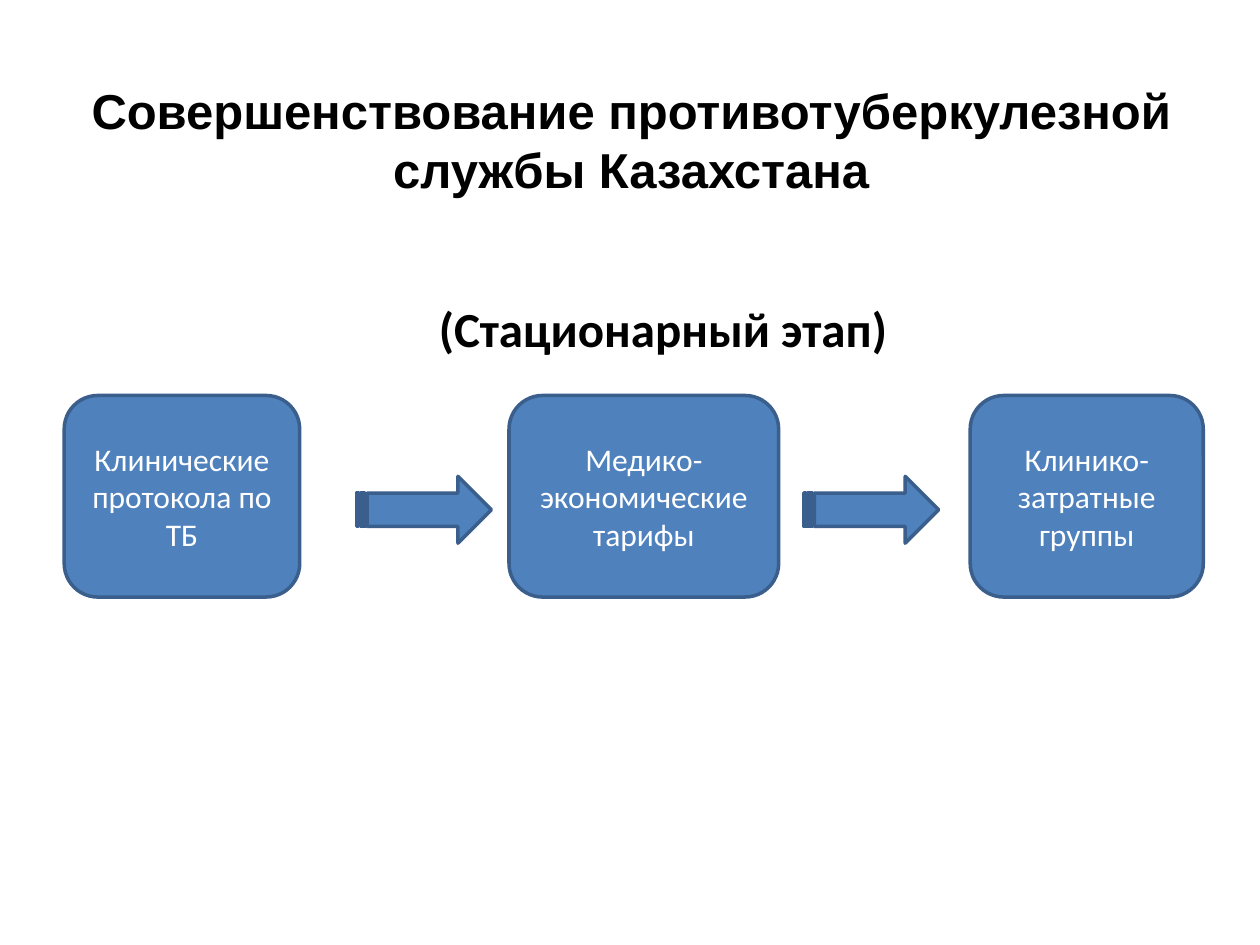
from dataclasses import dataclass

from pptx import Presentation
from pptx.dml.color import RGBColor
from pptx.enum.shapes import MSO_SHAPE
from pptx.enum.text import MSO_ANCHOR, MSO_AUTO_SIZE, PP_ALIGN
from pptx.util import Pt


@dataclass(frozen=True)
class Theme:
    background: str = "FFFFFF"
    heading: str = "000000"
    label: str = "FFFFFF"
    fill: str = "4F81BD"
    outline: str = "3A5F8C"
    title_font: str = "Arial"
    body_font: str = "Calibri"
    heading_size: float = 28
    label_size: float = 18
    outline_width: float = 2


class SlideBuilder:
    def __init__(self, slide, theme):
        self.slide = slide
        self.theme = theme
        background = slide.background.fill
        background.solid()
        background.fore_color.rgb = RGBColor.from_string(theme.background)

    def add_text(self, shape, text, font, size, color, bold=False):
        frame = shape.text_frame
        frame.word_wrap = True
        frame.auto_size = MSO_AUTO_SIZE.NONE
        paragraph = frame.paragraphs[0]
        paragraph.alignment = PP_ALIGN.CENTER
        run = paragraph.add_run()
        run.text = text
        run.font.name = font
        run.font.size = Pt(size)
        run.font.bold = bold
        run.font.color.rgb = RGBColor.from_string(color)
        return frame

    def title(self, text, left, top, width, height):
        shape = self.slide.shapes.title
        shape.left, shape.top = Pt(left), Pt(top)
        shape.width, shape.height = Pt(width), Pt(height)
        frame = self.add_text(shape, text, self.theme.title_font,
                              self.theme.heading_size, self.theme.heading, True)
        frame.vertical_anchor = MSO_ANCHOR.MIDDLE

    def subtitle(self, text, left, top, width, height, indent):
        shape = self.slide.shapes.add_textbox(
            Pt(left), Pt(top), Pt(width), Pt(height))
        frame = self.add_text(shape, text, self.theme.body_font,
                              self.theme.heading_size, self.theme.heading, True)
        frame.vertical_anchor = MSO_ANCHOR.TOP
        frame.margin_left += Pt(indent)

    def block(self, kind, left, top, width, height):
        shape = self.slide.shapes.add_shape(
            kind, Pt(left), Pt(top), Pt(width), Pt(height))
        shape.shadow.inherit = False
        shape.fill.solid()
        shape.fill.fore_color.rgb = RGBColor.from_string(self.theme.fill)
        shape.line.color.rgb = RGBColor.from_string(self.theme.outline)
        shape.line.width = Pt(self.theme.outline_width)
        return shape

    def step(self, text, left, top, width, height):
        shape = self.block(MSO_SHAPE.FLOWCHART_ALTERNATE_PROCESS,
                           left, top, width, height)
        frame = self.add_text(shape, text, self.theme.body_font,
                              self.theme.label_size, self.theme.label)
        frame.vertical_anchor = MSO_ANCHOR.MIDDLE

    def arrow(self, left, top, width, height):
        self.block(MSO_SHAPE.STRIPED_RIGHT_ARROW, left, top, width, height)


def main():
    presentation = Presentation()
    presentation.slide_width, presentation.slide_height = Pt(720), Pt(540)
    slide = presentation.slides.add_slide(presentation.slide_layouts[5])
    builder = SlideBuilder(slide, Theme())

    margin, content_width = 36.7, 648
    builder.subtitle("(Стационарный этап)", margin, 167, content_width, 291.6,
                     indent=36)
    builder.title("Совершенствование противотуберкулезной службы Казахстана",
                  margin, 43.2, content_width, 73.4)

    step_top, step_height = 226, 115.2
    steps = [
        ("Клинические протокола по ТБ", margin, 134.6),
        ("Медико-экономические тарифы", 290.9, 154.1),
        ("Клинико-затратные группы", 554.4, 133.2),
    ]
    for text, left, width in steps:
        builder.step(text, left, step_top, width, step_height)

    arrow_width, arrow_height = 77, 38.2
    for left in (203.8, 459.4):
        builder.arrow(left, 272.2, arrow_width, arrow_height)

    presentation.save("out.pptx")


if __name__ == "__main__":
    main()
